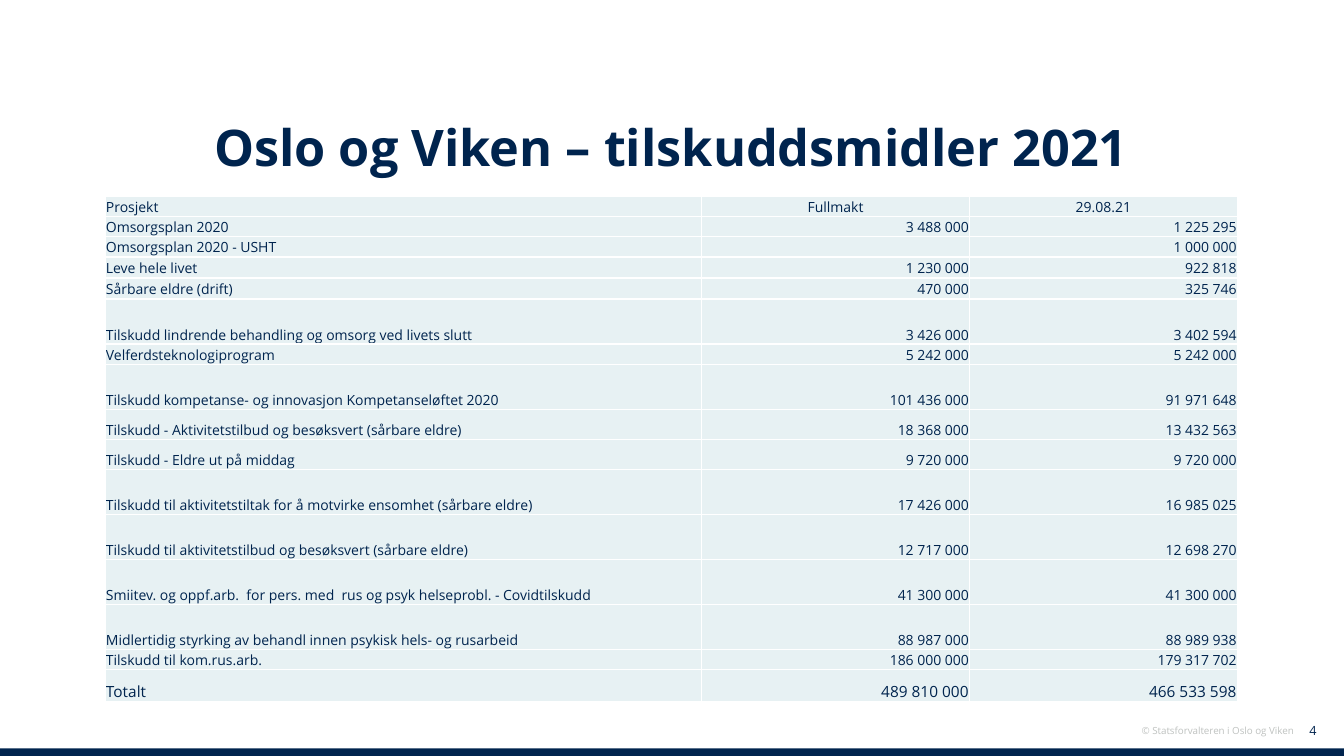
import pptx
import pptx.util
import pptx.dml.color
import pptx.enum.shapes
import pptx.enum.text
import pptx.oxml.ns
from lxml import etree

Pt = pptx.util.Pt
ALIGN = pptx.enum.text.PP_ALIGN
ANCHOR = pptx.enum.text.MSO_ANCHOR

# Content
TITLE = "Oslo og Viken – tilskuddsmidler 2021"
COPYRIGHT = "© Statsforvalteren i Oslo og Viken"
PAGE = "4"
FONT, NAVY, GREY, PALE, WHITE = "Open Sans", "00244E", "BFC2C0", "E7F1F3", "FFFFFF"

# Row heights, then project, authorisation and amount spent
LOW, MID, HIGH = 14.4, 21.5, 32.2
ROWS = [
    (LOW, "Prosjekt", "Fullmakt", "29.08.21"),
    (LOW, "Omsorgsplan 2020", "3 488 000", "1 225 295"),
    (LOW, "Omsorgsplan 2020 - USHT", "", "1 000 000"),
    (15, "Leve hele livet", "1 230 000", "922 818"),
    (15, "Sårbare eldre (drift)", "470 000", "325 746"),
    (HIGH, "Tilskudd lindrende behandling og omsorg ved livets slutt", "3 426 000", "3 402 594"),
    (LOW, "Velferdsteknologiprogram", "5 242 000", "5 242 000"),
    (HIGH, "Tilskudd kompetanse- og innovasjon Kompetanseløftet 2020", "101 436 000", "91 971 648"),
    (MID, "Tilskudd - Aktivitetstilbud og besøksvert (sårbare eldre)", "18 368 000", "13 432 563"),
    (MID, "Tilskudd - Eldre ut på middag", "9 720 000", "9 720 000"),
    (HIGH, "Tilskudd til aktivitetstiltak for å motvirke ensomhet (sårbare eldre)",
     "17 426 000", "16 985 025"),
    (HIGH, "Tilskudd til aktivitetstilbud og besøksvert (sårbare eldre)", "12 717 000", "12 698 270"),
    (HIGH, "Smiitev. og oppf.arb.  for pers. med  rus og psyk helseprobl. - Covidtilskudd",
     "41 300 000", "41 300 000"),
    (HIGH, "Midlertidig styrking av behandl innen psykisk hels- og rusarbeid",
     "88 987 000", "88 989 938"),
    (LOW, "Tilskudd til kom.rus.arb.", "186 000 000", "179 317 702"),
    (23, "Totalt", "489 810 000", "466 533 598"),
]
COLS = [426, 191.3, 191.3]


def rgb(color):
    return pptx.dml.color.RGBColor.from_string(color)


def style(p, size, color, align, bold=False):
    p.alignment = align
    for r in p.runs:
        r.font.name, r.font.size, r.font.bold = FONT, Pt(size), bold
        r.font.color.rgb = rgb(color)


def add_text(s, text, box, size, color, align, anchor, bold=False, inset=3.6):
    tf = s.shapes.add_textbox(*map(Pt, box)).text_frame
    tf.word_wrap = True
    tf.vertical_anchor = anchor
    tf.margin_top = tf.margin_bottom = Pt(inset)
    tf.text = text
    style(tf.paragraphs[0], size, color, align, bold)


def add_borders(cell):
    tcPr = cell._tc.get_or_add_tcPr()
    qn = pptx.oxml.ns.qn
    for i, side in enumerate(("lnL", "lnR", "lnT", "lnB")):
        ln = etree.Element(qn("a:" + side), w=str(Pt(1)))
        fill = etree.SubElement(ln, qn("a:solidFill"))
        etree.SubElement(fill, qn("a:srgbClr"), val=WHITE)
        tcPr.insert(i, ln)


def fill_cell(cell, text, size, align):
    cell.margin_left = cell.margin_right = cell.margin_top = Pt(0.5)
    cell.margin_bottom = 0
    cell.vertical_anchor = ANCHOR.BOTTOM
    cell.fill.solid()
    cell.fill.fore_color.rgb = rgb(PALE)
    add_borders(cell)
    cell.text_frame.text = text
    p = cell.text_frame.paragraphs[0]
    style(p, size, NAVY, align)
    if not text:  # keeps an empty cell from stretching its row
        etree.SubElement(p._p, pptx.oxml.ns.qn("a:endParaRPr"), sz=str(size * 100))


prs = pptx.Presentation()
prs.slide_width, prs.slide_height = Pt(960), Pt(540)
s = prs.slides.add_slide(prs.slide_layouts[6])

# Footer
bar = s.shapes.add_shape(pptx.enum.shapes.MSO_SHAPE.RECTANGLE, 0, Pt(534.6), Pt(960), Pt(5.4))
bar.shadow.inherit = False
bar.fill.solid()
bar.fill.fore_color.rgb = rgb(NAVY)
bar.line.fill.background()
add_text(s, PAGE, (908.6, 512.6, 39, 18.7), 9, NAVY, ALIGN.RIGHT, ANCHOR.MIDDLE)
add_text(s, COPYRIGHT, (781.2, 514, 150, 15.8), 7, GREY, ALIGN.RIGHT, ANCHOR.TOP)

# Title
add_text(s, TITLE, (82.8, 68.4, 793.4, 57.6), 36, NAVY, ALIGN.CENTER, ANCHOR.BOTTOM,
         bold=True, inset=0)

# Grant table
heights = [row[0] for row in ROWS]
table = s.shapes.add_table(len(ROWS), len(COLS), Pt(75.2), Pt(140.4),
                           Pt(sum(COLS)), Pt(sum(heights))).table
table.first_row = table.horz_banding = False
for col, width in zip(table.columns, COLS):
    col.width = Pt(width)
for i, (height, *texts) in enumerate(ROWS):
    table.rows[i].height = Pt(height)
    size = 11 if i == len(ROWS) - 1 else 10
    for j, text in enumerate(texts):
        align = ALIGN.LEFT if j == 0 else ALIGN.CENTER if i == 0 else ALIGN.RIGHT
        fill_cell(table.cell(i, j), text, size, align)

prs.save("out.pptx")
